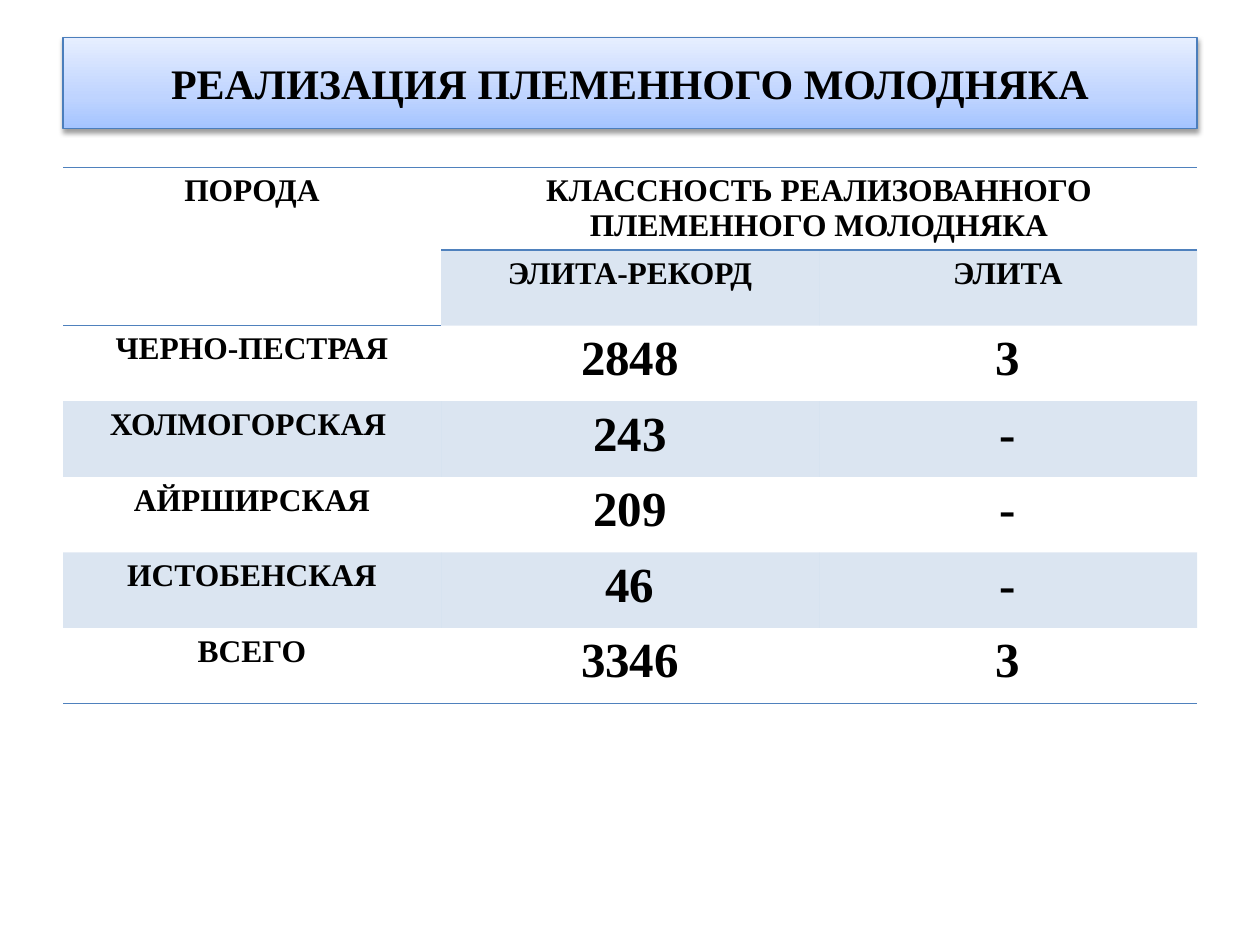
from copy import deepcopy
from pptx import Presentation
from pptx.dml.color import RGBColor
from pptx.enum import text
from pptx.oxml import parse_xml
from pptx.oxml.ns import nsdecls, qn
from pptx.util import Pt

BLACK = RGBColor(0x00, 0x00, 0x00)
BLUE = RGBColor(0x4F, 0x81, 0xBD)
OUTLINE = RGBColor(0x4B, 0x7E, 0xBC)
GRADIENT = [
    (0, RGBColor(0xA4, 0xC4, 0xFF)),
    (0.35, RGBColor(0xBF, 0xD4, 0xFF)),
    (1, RGBColor(0xE6, 0xEE, 0xFF)),
]
FONT = "Times New Roman"
ROWS = [
    ("ПОРОДА", "КЛАССНОСТЬ РЕАЛИЗОВАННОГО ПЛЕМЕННОГО МОЛОДНЯКА", ""),
    ("", "ЭЛИТА-РЕКОРД", "ЭЛИТА"),
    ("ЧЕРНО-ПЕСТРАЯ", "2848", "3"),
    ("ХОЛМОГОРСКАЯ ", "243", "-"),
    ("АЙРШИРСКАЯ", "209", "-"),
    ("ИСТОБЕНСКАЯ", "46", "-"),
    ("ВСЕГО", "3346", "3"),
]


def write(tf, words, size):
    p = tf.paragraphs[0]
    p.text = words
    p.alignment = text.PP_ALIGN.CENTER
    p.font.name, p.font.size, p.font.bold = FONT, Pt(size), True
    p.font.color.rgb = BLACK
    for r in p.runs:
        r.font.name, r.font.size, r.font.bold = FONT, Pt(size), True
        r.font.color.rgb = BLACK


def add_border(cell, side):
    cell._tc.get_or_add_tcPr().insert(0, parse_xml(
        f'<a:{side} {nsdecls("a")} w="{Pt(1)}"><a:solidFill>'
        f'<a:srgbClr val="{BLUE}"/></a:solidFill></a:{side}>'))


prs = Presentation()
prs.slide_width, prs.slide_height = Pt(720), Pt(540)
s = prs.slides.add_slide(prs.slide_layouts[5])

title = s.shapes.title
title.left, title.top, title.width, title.height = Pt(36), Pt(21.6), Pt(648), Pt(51.84)
title.text_frame.vertical_anchor = text.MSO_ANCHOR.MIDDLE
write(title.text_frame, "РЕАЛИЗАЦИЯ ПЛЕМЕННОГО МОЛОДНЯКА", 24)
title.fill.gradient()
title.fill.gradient_angle = 90
stops = title._element.spPr.find(qn("a:gradFill")).find(qn("a:gsLst"))
stops.append(deepcopy(stops[0]))
for stop, (position, color) in zip(title.fill.gradient_stops, GRADIENT):
    stop.position = position
    stop.color.rgb = color
title.line.color.rgb = OUTLINE
title.line.width = Pt(0.75)
title._element.spPr.append(parse_xml(
    f'<a:effectLst {nsdecls("a")}><a:outerShdw blurRad="{Pt(3.1)}" dist="{Pt(1.6)}" '
    'dir="5400000" rotWithShape="0"><a:srgbClr val="000000"><a:alpha val="38000"/>'
    '</a:srgbClr></a:outerShdw></a:effectLst>'))

frame = s.shapes.add_table(len(ROWS), 3, Pt(36), Pt(95.76), Pt(648), Pt(302.4))
table = frame.table
table.first_row = table.horz_banding = False
table._tbl.tblPr.find(qn("a:tableStyleId")).text = "{2D5ABB26-0587-4C30-8999-92F81FD0307C}"
for row in table.rows:
    row.height = Pt(43.2)
table.cell(0, 0).merge(table.cell(1, 0))
table.cell(0, 1).merge(table.cell(0, 2))

for i, row in enumerate(ROWS):
    for j, words in enumerate(row):
        cell = table.cell(i, j)
        if i % 2 and not cell.is_spanned:
            cell.fill.solid()
            cell.fill.fore_color.rgb = BLUE
            color = cell._tc.tcPr.find(qn("a:solidFill"))[0]
            color.append(parse_xml(f'<a:alpha {nsdecls("a")} val="20000"/>'))
        else:
            cell.fill.background()
        if i in (0, len(ROWS) - 1):
            add_border(cell, "lnB")
        if i == 0:
            add_border(cell, "lnT")
        if words:
            write(cell.text_frame, words, 28 if i > 1 and j > 0 else 18)

prs.save("out.pptx")
